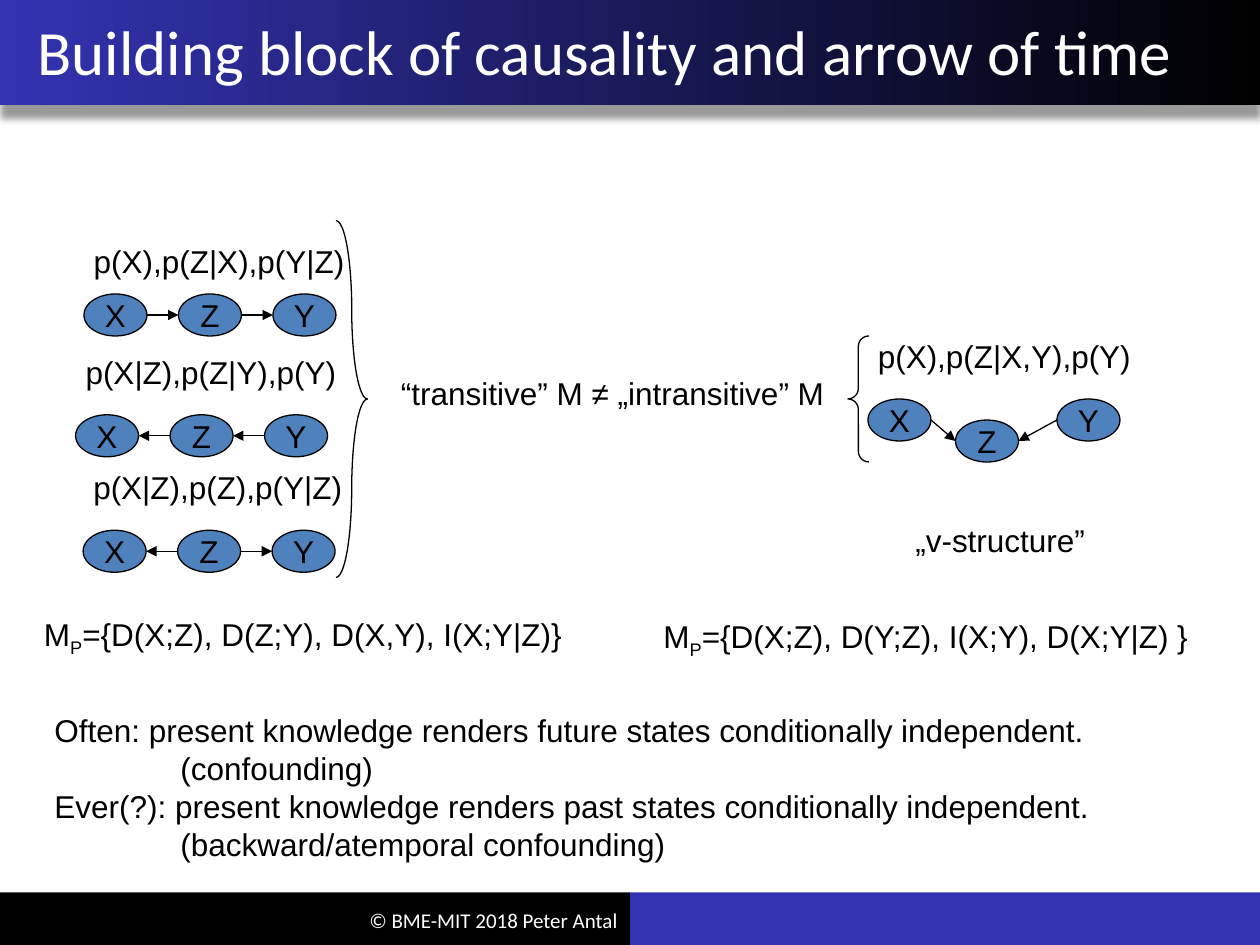
"""Build a slide comparing transitive and intransitive causal structures."""
from lxml import etree
from pptx import Presentation, util as u
from pptx.dml import color
from pptx.enum import shapes, text
from pptx.oxml import ns

HEX = {"black": "000000", "white": "FFFFFF", "blue": "3333B2", "node": "4F81BD"}
TITLE = "Building block of causality and arrow of time"
FOOT = "© BME-MIT 2018 Peter Antal"
NODE_W, NODE_H = 36, 24
GRAPHS = [
    {"at": {"X": (48, 168), "Z": (102, 168), "Y": (156, 168)}, "arcs": ["XZ", "ZY"]},
    {"at": {"X": (43.2, 237), "Z": (97.2, 237), "Y": (151.2, 237)}, "arcs": ["ZX", "YZ"]},
    {"at": {"X": (47.5, 303), "Z": (101.5, 303), "Y": (155.5, 303)}, "arcs": ["ZX", "ZY"]},
    {"at": {"X": (496, 228), "Z": (546, 240), "Y": (604, 228)}, "arcs": ["XZ", "YZ"]},
]
LABELS = [
    ("p(X),p(Z|X),p(Y|Z)", (46.5, 134.5, 158, 29)),
    ("p(X|Z),p(Z|Y),p(Y)", (41.8, 198, 158, 29)),
    ("p(X|Z),p(Z),p(Y|Z)", (46.2, 264, 157, 29)),
    ("“transitive” M ≠ „intransitive” M", (222, 210, 258.5, 29)),
    ("p(X),p(Z|X,Y),p(Y)", (494.5, 189, 159, 29)),
    ("„v-structure”", (516, 294, 127.5, 29)),
]
MODELS = [
    ("={D(X;Z), D(Y;Z), I(X;Y), D(X;Y|Z) }", (372, 349, 360, 29)),
    ("={D(X;Z), D(Z;Y), D(X,Y), I(X;Y|Z)}", (18, 348, 336, 29)),
]
NOTES = [
    ("Often: present knowledge renders future states conditionally independent.", 0),
    ("(confounding)", 72),
    ("Ever(?): present knowledge renders past states conditionally independent.", 0),
    ("(backward/atemporal confounding)", 72),
]
KIND = shapes.MSO_SHAPE
BRACES = [
    (KIND.RIGHT_BRACE, (192, 126, 18, 204), 2.83),
    (KIND.LEFT_BRACE, (484.5, 192, 12, 72), 0.5),
]

deck = Presentation()
deck.slide_width, deck.slide_height = u.Pt(720), u.Pt(540)
page = deck.slides.add_slide(deck.slide_layouts[6])


def rgb(name):
    return color.RGBColor.from_string(HEX[name])


def pts(box):
    return [u.Pt(v) for v in box]


def style(para, size=18, face="Arial", ink="black"):
    for run in para.runs:
        run.font.size, run.font.name = u.Pt(size), face
        run.font.color.rgb = rgb(ink)


def shape(kind, box, fill=None, line=None):
    item = page.shapes.add_shape(kind, *pts(box))
    item.shadow.inherit = False
    if fill:
        item.fill.solid()
        item.fill.fore_color.rgb = rgb(fill)
    else:
        item.fill.background()
    if line:
        item.line.color.rgb = rgb(line)
        item.line.width = u.Pt(0.75)
    else:
        item.line.fill.background()
    return item


def label(words, box, wrap=False, **look):
    frame = page.shapes.add_textbox(*pts(box)).text_frame
    frame.word_wrap = wrap
    frame.text = words
    for para in frame.paragraphs:
        style(para, **look)
    return frame


def indent(para, left):
    para._p.get_or_add_pPr().set("marL", str(u.Pt(left)))


def banner():
    bar = shape(KIND.RECTANGLE, (0, 0, 720, 60), "black")
    bar.fill.gradient()
    bar.fill.gradient_angle = 180
    for stop, name in zip(bar.fill.gradient_stops, ("black", "blue")):
        stop.color.rgb = rgb(name)
    glow = bar._element.spPr.find(ns.qn("a:effectLst"))
    drop = etree.SubElement(glow, ns.qn("a:outerShdw"), blurRad=str(u.Pt(4)),
                            dist=str(u.Pt(7)), dir="5400000", rotWithShape="0")
    tint = etree.SubElement(drop, ns.qn("a:srgbClr"), val=HEX["black"])
    etree.SubElement(tint, ns.qn("a:alpha"), val="40000")


def node(name, spot):
    frame = shape(KIND.OVAL, (*spot, NODE_W, NODE_H), "node", "black").text_frame
    frame.text, frame.word_wrap = name, False
    frame.vertical_anchor = text.MSO_ANCHOR.MIDDLE
    frame.paragraphs[0].alignment = text.PP_ALIGN.CENTER
    style(frame.paragraphs[0])


def side(spot, right):
    return spot[0] + NODE_W * right, spot[1] + NODE_H / 2


def arrow(tail, head):
    right = tail[0] < head[0]
    ends = pts(side(tail, right) + side(head, not right))
    link = page.shapes.add_connector(shapes.MSO_CONNECTOR.STRAIGHT, *ends)
    link.line.color.rgb = rgb("black")
    link.line.width = u.Pt(0.75)
    etree.SubElement(link.line._get_or_add_ln(), ns.qn("a:tailEnd"), type="triangle")
    etree.SubElement(link._element.spPr, ns.qn("a:effectLst"))


shape(KIND.RECTANGLE, (360, 510, 360, 30), "blue")
shape(KIND.RECTANGLE, (0, 510, 360, 30), "black")
banner()
foot = label(FOOT, (84, 511, 276, 29), True, size=12, face="Calibri", ink="white")
foot.paragraphs[0].alignment = text.PP_ALIGN.RIGHT
title = label(TITLE, (0, 0, 709, 58), True, size=36, face="Calibri", ink="white")
indent(title.paragraphs[0], 14.4)
for frame in (foot, title):
    frame.vertical_anchor = text.MSO_ANCHOR.MIDDLE

for graph in GRAPHS:
    spots = graph["at"]
    for name, spot in spots.items():
        node(name, spot)
    for tail, head in graph["arcs"]:
        arrow(spots[tail], spots[head])

for kind, box, bend in BRACES:
    brace = shape(kind, box, line="black")
    brace.adjustments[0], brace.adjustments[1] = bend, 0.5

for words, box in LABELS:
    label(words, box)

for words, box in MODELS:
    para = label("M", box, True).paragraphs[0]
    sub = para.add_run()
    sub.text = "P"
    para.add_run().text = words
    style(para)
    sub.font._element.set("baseline", "-25000")

notes = label("\n".join(line for line, _ in NOTES), (24, 403, 611, 94.5))
for para, (_, left) in zip(notes.paragraphs, NOTES):
    indent(para, left)

deck.save("out.pptx")
